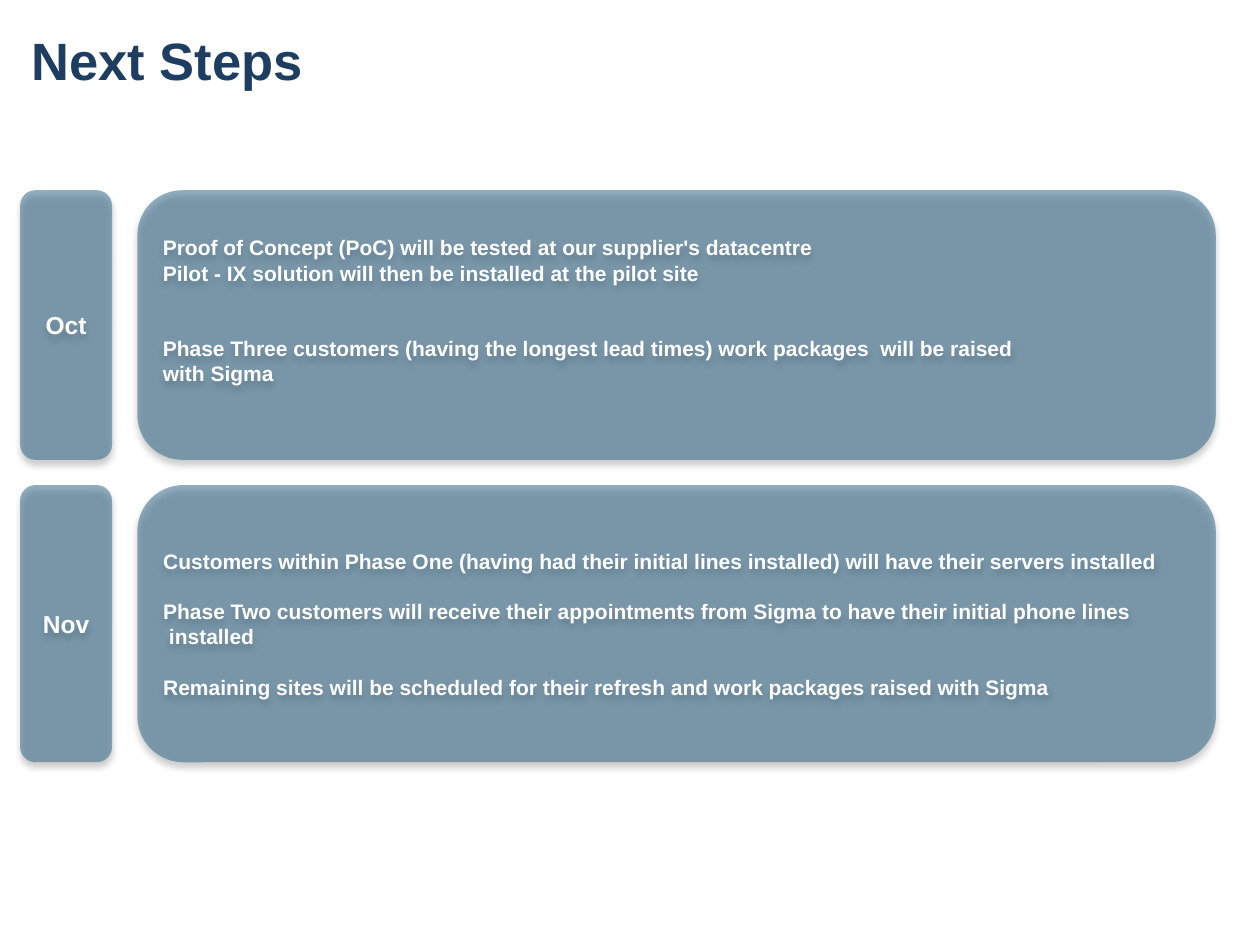
from lxml.etree import SubElement
from pptx import Presentation
from pptx.dml.color import RGBColor
from pptx.enum.shapes import MSO_SHAPE
from pptx.enum.text import MSO_ANCHOR, PP_ALIGN
from pptx.oxml.ns import qn
from pptx.util import Inches, Pt

NAVY = RGBColor(0x1D, 0x3E, 0x61)
STEEL = RGBColor(0x28, 0x61, 0x87)
WHITE = RGBColor(0xFF, 0xFF, 0xFF)

BLANK_LINE = 14.4
MONTH_LEFT, MONTH_WIDTH = 0.16, 0.73
STEPS_LEFT, STEPS_WIDTH = 1.09, 8.56

# Month, top, height, extra bottom inset, steps as (blank lines before, text)
ROWS = [
    ("Oct", 1.51, 2.14, 0.23, [
        (0, "Proof of Concept (PoC) will be tested at our supplier's datacentre"),
        (0, "Pilot - IX solution will then be installed at the pilot site"),
        (2, "Phase Three customers (having the longest lead times) work packages  will be raised"),
        (0, "with Sigma"),
    ]),
    ("Nov", 3.85, 2.2, 0, [
        (0, "Customers within Phase One (having had their initial lines installed) will have their servers installed"),
        (1, "Phase Two customers will receive their appointments from Sigma to have their initial phone lines"),
        (0, " installed"),
        (1, "Remaining sites will be scheduled for their refresh and work packages raised with Sigma"),
    ]),
]


class SlideBuilder:
    font = "Arial"

    def __init__(self, slide):
        self.slide = slide

    def set_text(self, tf, lines, size, color, align=PP_ALIGN.LEFT):
        """Fill a text frame with (blank lines before, text) pairs."""
        tf.word_wrap = True
        tf.vertical_anchor = MSO_ANCHOR.MIDDLE
        for i, (gap, text) in enumerate(lines):
            p = tf.paragraphs[0] if i == 0 else tf.add_paragraph()
            p.text = text
            p.alignment = align
            if gap:
                p.space_before = Pt(gap * BLANK_LINE)
            p.font.name = self.font
            p.font.size = Pt(size)
            p.font.bold = True
            p.font.color.rgb = color

    def title(self, text, left, top, width, height):
        box = self.slide.shapes.add_textbox(
            Inches(left), Inches(top), Inches(width), Inches(height))
        tf = box.text_frame
        tf.margin_left = tf.margin_right = tf.margin_top = tf.margin_bottom = 0
        self.set_text(tf, [(0, text)], 30, NAVY)

    def panel(self, left, top, width, height):
        """Add a half-transparent rounded panel with a soft shadow below."""
        sp = self.slide.shapes.add_shape(
            MSO_SHAPE.ROUNDED_RECTANGLE,
            Inches(left), Inches(top), Inches(width), Inches(height))
        sp.line.fill.background()
        sp.fill.solid()
        sp.fill.fore_color.rgb = STEEL
        sp.shadow.inherit = False
        props = sp.element.spPr
        color = props.find(qn("a:solidFill")).find(qn("a:srgbClr"))
        SubElement(color, qn("a:alpha"), val="50000")
        shadow = SubElement(
            props.find(qn("a:effectLst")), qn("a:outerShdw"),
            blurRad=str(Pt(4)), dist=str(Pt(3)), dir="5400000", rotWithShape="0")
        color = SubElement(shadow, qn("a:srgbClr"), val="000000")
        SubElement(color, qn("a:alpha"), val="40000")
        return sp

    def steps(self, top, height, extra_bottom, lines):
        tf = self.panel(STEPS_LEFT, top, STEPS_WIDTH, height).text_frame
        tf.margin_bottom = Inches(0.05 + extra_bottom)
        self.set_text(tf, lines, 12, WHITE)

    def month(self, name, top, height):
        tf = self.panel(MONTH_LEFT, top, MONTH_WIDTH, height).text_frame
        self.set_text(tf, [(0, name)], 14, WHITE, PP_ALIGN.CENTER)


def main():
    prs = Presentation()
    prs.slide_width, prs.slide_height = Inches(10), Inches(7.5)
    s = SlideBuilder(prs.slides.add_slide(prs.slide_layouts[6]))
    s.title("Next Steps", 0.25, -0.06, 9.5, 1.06)
    for name, top, height, extra_bottom, lines in ROWS:
        s.steps(top, height, extra_bottom, lines)
        s.month(name, top, height)
    prs.save("out.pptx")


if __name__ == "__main__":
    main()
